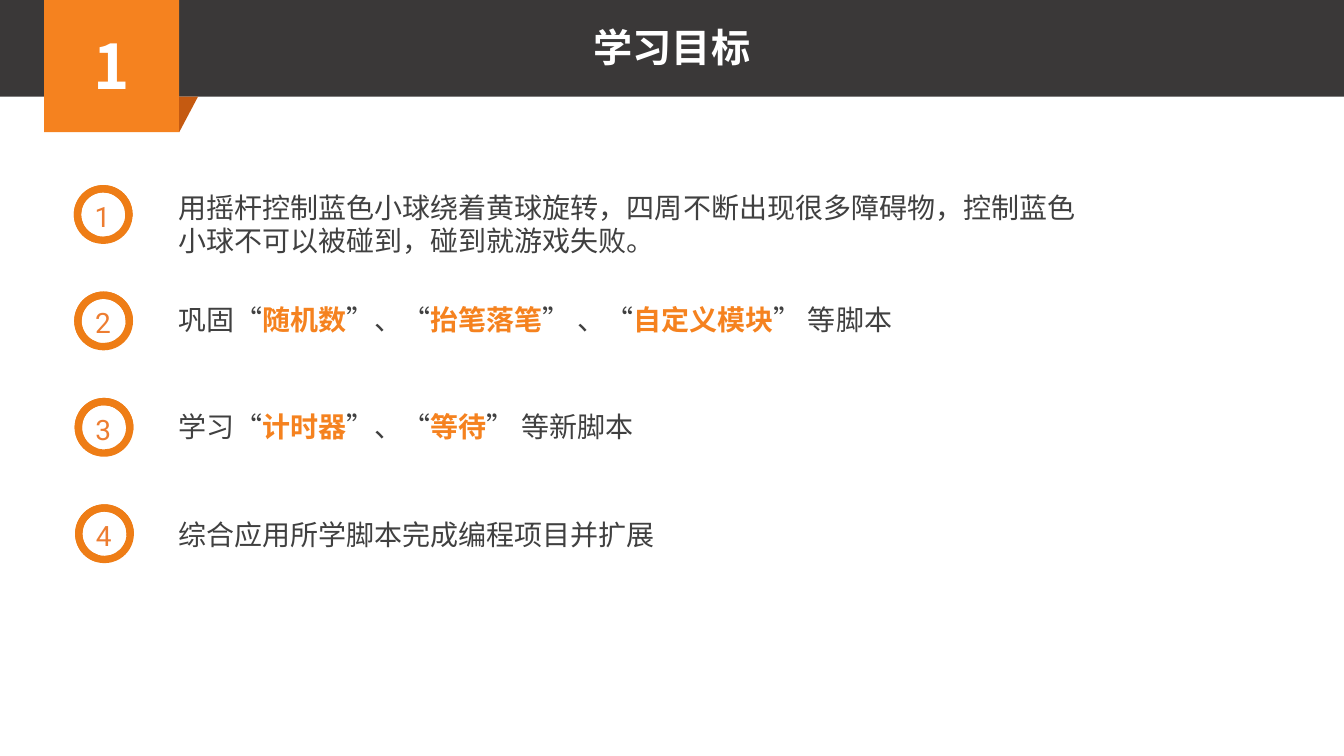
from lxml.etree import SubElement
from pptx import Presentation
from pptx.dml.color import RGBColor
from pptx.enum.shapes import MSO_SHAPE
from pptx.enum.text import MSO_ANCHOR, PP_ALIGN
from pptx.oxml.ns import qn
from pptx.util import Pt

CHARCOAL = RGBColor(0x3A, 0x38, 0x38)
ORANGE = RGBColor(0xF5, 0x82, 0x1F)
DARK_ORANGE = RGBColor(0xC5, 0x5A, 0x11)
RING_ORANGE = RGBColor(0xEE, 0x7D, 0x16)
NUMBER_ORANGE = RGBColor(0xED, 0x7D, 0x31)
TEXT_GREY = RGBColor(0x40, 0x40, 0x40)
WHITE = RGBColor(0xFF, 0xFF, 0xFF)
CHINESE_FONT = "Noto Sans CJK SC"
NUMBER_FONT = "Roboto"

PAGE_WIDTH, PAGE_HEIGHT = 960, 540
ROW_PITCH = 76
RING_SIZE = 42

# Each goal: text width, text drop below the ring top, (wording, highlighted) parts
GOALS = [
    (668, 0, [("用摇杆控制蓝色小球绕着黄球旋转，四周不断出现很多障碍物，"
               "控制蓝色小球不可以被碰到，碰到就游戏失败。", False)]),
    (695, 4.5, [("巩固“", False), ("随机数", True), ("”、“", False),
                ("抬笔落笔", True), ("” 、“", False),
                ("自定义模块", True), ("” 等脚本", False)]),
    (695, 5, [("学习“", False), ("计时器", True), ("”、“", False),
              ("等待", True), ("” 等新脚本", False)]),
    (695, 5.5, [("综合应用所学脚本完成编程项目并扩展", False)]),
]


def add_block(page, kind, left, top, width, height, color):
    block = page.shapes.add_shape(kind, Pt(left), Pt(top), Pt(width), Pt(height))
    block.shadow.inherit = False
    block.fill.solid()
    block.fill.fore_color.rgb = color
    block.line.fill.background()
    return block


def add_text_box(page, left, top, width, height):
    box = page.shapes.add_textbox(Pt(left), Pt(top), Pt(width), Pt(height))
    box.text_frame.word_wrap = True
    return box


def style_paragraph(para, size, color, name=CHINESE_FONT, bold=False):
    para.font.size = Pt(size)
    para.font.bold = bold
    para.font.color.rgb = color
    para.font.name = name
    # East Asian glyphs take their typeface from a separate element
    defaults = para._p.get_or_add_pPr().find(qn("a:defRPr"))
    SubElement(defaults, qn("a:ea")).set("typeface", name)


def add_header(page, left, top, width, height):
    # Dark band
    add_block(page, MSO_SHAPE.RECTANGLE, left, top, width, height, CHARCOAL)

    # Section number tab with its folded corner
    tab_left, tab_size = left + 31.5, 96.5
    tab = add_block(page, MSO_SHAPE.RECTANGLE, tab_left, top, tab_size, tab_size, ORANGE)
    tab.text_frame.vertical_anchor = MSO_ANCHOR.MIDDLE
    para = tab.text_frame.paragraphs[0]
    para.text = "1"
    para.alignment = PP_ALIGN.CENTER
    style_paragraph(para, 44, WHITE, bold=True)
    fold = add_block(page, MSO_SHAPE.RIGHT_TRIANGLE, tab_left + tab_size, top + height,
                     13.5, tab_size - height, DARK_ORANGE)
    fold._element.spPr.xfrm.set("flipV", "1")

    # Title
    title_width = 315
    title = add_text_box(page, left + (width - title_width) / 2, top + 15, title_width, 41)
    para = title.text_frame.paragraphs[0]
    para.text = "学习目标"
    para.alignment = PP_ALIGN.CENTER
    style_paragraph(para, 28, WHITE, bold=True)


def add_numbered_ring(page, left, top, number):
    ring = add_block(page, MSO_SHAPE.DONUT, left, top, RING_SIZE, RING_SIZE, RING_ORANGE)
    ring.adjustments[0] = 0.125
    arc = add_block(page, MSO_SHAPE.BLOCK_ARC, left, top, RING_SIZE, RING_SIZE, RING_ORANGE)
    # Angles are in 60000ths of a degree, adjustments in 100000ths
    for index, value in enumerate((107.95 * 0.6, 5.13 * 0.6, 0.125)):
        arc.adjustments[index] = value

    label = add_text_box(page, left + 7.75, top + 6.5, 26, 31.5)
    label.text_frame.word_wrap = False
    para = label.text_frame.paragraphs[0]
    para.text = str(number)
    style_paragraph(para, 20, NUMBER_ORANGE, NUMBER_FONT)


def add_goal_text(page, left, top, width, parts):
    box = add_text_box(page, left, top, width, 31.5)
    para = box.text_frame.paragraphs[0]
    style_paragraph(para, 20, TEXT_GREY)
    for wording, highlighted in parts:
        span = para.add_run()
        span.text = wording
        if highlighted:
            span.font.bold = True
            span.font.color.rgb = ORANGE


def add_goals(page, left, top):
    for index, (width, drop, parts) in enumerate(GOALS):
        row_top = top + index * ROW_PITCH
        add_numbered_ring(page, left + index * 0.3, row_top, index + 1)
        add_goal_text(page, left + 67.5, row_top + drop, width, parts)


def main():
    deck = Presentation()
    deck.slide_width, deck.slide_height = Pt(PAGE_WIDTH), Pt(PAGE_HEIGHT)
    page = deck.slides.add_slide(deck.slide_layouts[6])
    add_header(page, 0, -2, PAGE_WIDTH, 71)
    add_goals(page, 52.75, 132.25)
    deck.save("out.pptx")


if __name__ == "__main__":
    main()
